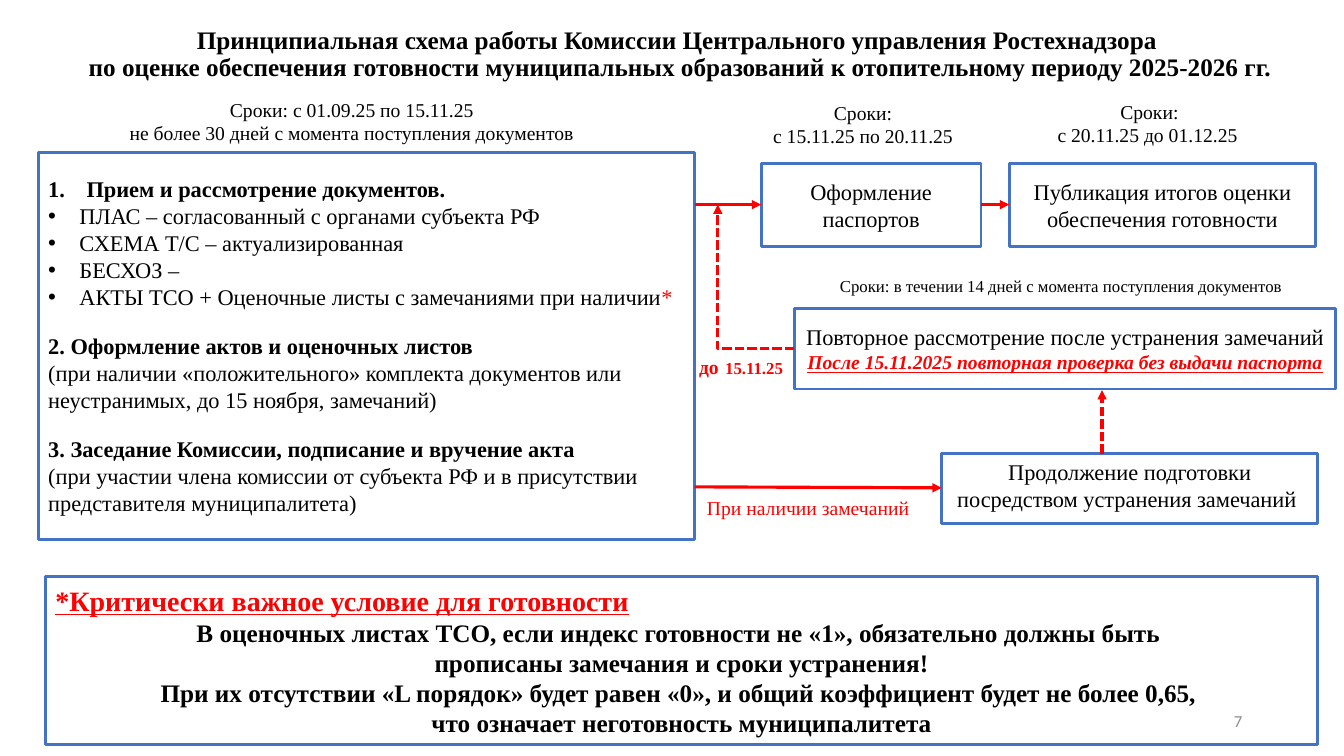
from dataclasses import dataclass

from lxml.etree import SubElement
from pptx import Presentation
from pptx.dml.color import RGBColor
from pptx.enum.dml import MSO_LINE
from pptx.enum.shapes import MSO_CONNECTOR, MSO_SHAPE
from pptx.enum.text import MSO_ANCHOR as Anchor, PP_ALIGN as Align
from pptx.oxml.ns import qn
from pptx.slide import Slide
from pptx.text.text import TextFrame
from pptx.util import Inches, Pt

BLACK = RGBColor(0x00, 0x00, 0x00)
RED = RGBColor(0xFF, 0x00, 0x00)
BLUE = RGBColor(0x44, 0x72, 0xC4)
GRAY = RGBColor(0x8C, 0x8C, 0x8C)
SERIF = "Times New Roman"
SECTION_GAP = 16
STEP_ROW = 2.03
BULLET = "•"
NUMBER = "1."


@dataclass(frozen=True)
class Span:
    text: str
    size: float = 16
    color: RGBColor = BLACK
    bold: bool = False
    italic: bool = False
    underline: bool = False
    font: str = SERIF


@dataclass(frozen=True)
class Line:
    spans: tuple[Span, ...]
    align: Align = Align.CENTER
    marker: str = ""
    before: float = 0
    spacing: float = 1.0


@dataclass(frozen=True)
class Block:
    left: float
    top: float
    width: float
    height: float
    lines: tuple[Line, ...]
    framed: bool = False
    anchor: Anchor = Anchor.TOP


@dataclass(frozen=True)
class Arrow:
    start: tuple[float, float]
    end: tuple[float, float]
    dashed: bool = False
    bent: bool = False


def centered(text: str, size: float = 16, color: RGBColor = BLACK, bold: bool = False) -> Line:
    return Line((Span(text, size, color, bold),))


def item(text: str, *more: Span) -> Line:
    return Line((Span(text), *more), Align.LEFT, BULLET)


def heading(text: str) -> Line:
    return Line((Span(text, bold=True),), Align.LEFT, before=SECTION_GAP)


def detail(text: str) -> Line:
    return Line((Span(text),), Align.LEFT)


def framed(left: float, top: float, width: float, height: float, *lines: Line,
           anchor: Anchor = Anchor.MIDDLE) -> Block:
    return Block(left, top, width, height, lines, True, anchor)


def label(left: float, top: float, width: float, height: float, *lines: Line) -> Block:
    return Block(left, top, width, height, lines)


BLOCKS = (
    Block(0.52, 0.12, 12.45, 0.74, (
        Line((Span("Принципиальная схема работы Комиссии Центрального управления Ростехнадзора \v"
                   "по оценке обеспечения готовности муниципальных образований "
                   "к отопительному периоду 2025-2026 гг.", 18, bold=True),), spacing=0.9),
    ), anchor=Anchor.BOTTOM),
    framed(
        0.38, 1.51, 6.51, 3.84,
        Line((Span("Прием и рассмотрение документов.", bold=True),), Align.LEFT, NUMBER),
        item("ПЛАС – согласованный с органами субъекта РФ"),
        item("СХЕМА Т/С – актуализированная"),
        item("БЕСХОЗ –"),
        item("АКТЫ ТСО + Оценочные листы с замечаниями при наличии", Span("*", color=RED)),
        heading("2. Оформление актов и оценочных листов"),
        detail("(при наличии «положительного» комплекта документов или "
               "неустранимых, до 15 ноября, замечаний)"),
        heading("3. Заседание Комиссии, подписание и вручение акта"),
        detail("(при участии члена комиссии от субъекта РФ и в присутствии "
               "представителя муниципалитета)"),
    ),
    framed(
        7.88, 3.06, 5.37, 0.8,
        centered("Повторное рассмотрение после устранения замечаний"),
        Line((Span("После 15.11.2025 повторная проверка без выдачи паспорта",
                   14, RED, True, True, True),)),
    ),
    framed(7.55, 1.62, 2.18, 0.83, centered("Оформление паспортов")),
    framed(10.01, 1.62, 3.04, 0.83, centered("Публикация итогов оценки обеспечения готовности")),
    framed(9.34, 4.5, 3.73, 0.69,
           centered("Продолжение подготовки посредством устранения замечаний "),
           anchor=Anchor.TOP),
    framed(
        0.45, 5.72, 12.62, 1.67,
        Line((Span("*Критически важное условие для готовности", 20, RED, True, underline=True),),
             Align.LEFT),
        centered("В оценочных листах ТСО, если индекс готовности не «1», обязательно должны быть \v"
                 "прописаны замечания и сроки устранения!", 18, bold=True),
        centered("При их отсутствии «L порядок» будет равен «0», и общий коэффициент "
                 "будет не более 0,65, \vчто означает неготовность муниципалитета", 18, bold=True),
    ),
    label(0.38, 0.92, 6.22, 0.57,
          centered("Сроки: с 01.09.25 по 15.11.25", 14),
          centered("не более 30 дней с момента поступления документов", 14)),
    label(7.55, 0.95, 2.02, 0.57,
          centered("Сроки:", 14), centered("с 15.11.25 по 20.11.25", 14)),
    label(10.39, 0.94, 2.02, 0.57,
          centered("Сроки:", 14), Line((Span("с 20.11.25 до 01.12.25", 14),), Align.LEFT)),
    label(7.84, 2.69, 5.37, 0.3,
          centered("Сроки: в течении 14 дней с момента поступления документов", 12)),
    label(6.82, 3.42, 1.06, 0.4,
          Line((Span("до", 14, RED, True), Span(" ", 18, RED, True),
                Span("15.11.25", 12, RED, True)))),
    label(6.89, 4.87, 2.25, 0.34, centered("При наличии замечаний", 14, RED)),
    Block(9.42, 6.95, 3, 0.4, (Line((Span("7", 12, GRAY, font="Calibri"),), Align.RIGHT),),
          anchor=Anchor.MIDDLE),
)

ARROWS = (
    Arrow((6.89, STEP_ROW), (7.55, STEP_ROW)),
    Arrow((9.73, STEP_ROW), (10.01, STEP_ROW)),
    Arrow((6.89, 4.83), (9.34, 4.84)),
    Arrow((10.93, 4.5), (10.93, 3.87), dashed=True),
    Arrow((7.88, 3.46), (7.12, STEP_ROW), dashed=True, bent=True),
)


def write_lines(text_frame: TextFrame, lines: tuple[Line, ...]) -> None:
    for index, line in enumerate(lines):
        paragraph = text_frame.add_paragraph() if index else text_frame.paragraphs[0]
        paragraph.alignment = line.align
        paragraph.line_spacing = line.spacing
        paragraph.space_before = Pt(line.before)
        if line.marker:
            properties = paragraph._p.get_or_add_pPr()
            indent = Inches(0.38 if line.marker == NUMBER else 0.31)
            properties.set("marL", str(indent))
            properties.set("indent", str(-indent))
            if line.marker == NUMBER:
                SubElement(properties, qn("a:buAutoNum"), type="arabicPeriod")
            else:
                SubElement(properties, qn("a:buFont"), typeface="Arial")
                SubElement(properties, qn("a:buChar"), char=line.marker)
        for position, span in enumerate(line.spans):
            if position:
                paragraph.add_run().text = span.text
            else:
                paragraph.text = span.text
            for run in paragraph.runs[position:]:
                font = run.font
                font.name, font.size = span.font, Pt(span.size)
                font.bold, font.italic, font.underline = span.bold, span.italic, span.underline
                font.color.rgb = span.color


def draw_block(slide: Slide, block: Block) -> None:
    bounds = [Inches(value) for value in (block.left, block.top, block.width, block.height)]
    if block.framed:
        shape = slide.shapes.add_shape(MSO_SHAPE.RECTANGLE, *bounds)
        shape.shadow.inherit = False
        shape.fill.background()
        shape.line.color.rgb = BLUE
        shape.line.width = Pt(2)
    else:
        shape = slide.shapes.add_textbox(*bounds)
    shape.text_frame.word_wrap = True
    shape.text_frame.vertical_anchor = block.anchor
    write_lines(shape.text_frame, block.lines)


def draw_arrow(slide: Slide, arrow: Arrow) -> None:
    kind = MSO_CONNECTOR.ELBOW if arrow.bent else MSO_CONNECTOR.STRAIGHT
    ends = [Inches(value) for value in (*arrow.start, *arrow.end)]
    connector = slide.shapes.add_connector(kind, *ends)
    properties = connector._element.spPr
    if arrow.bent:
        properties.find(qn("a:prstGeom")).set("prst", "bentConnector2")
    connector.line.color.rgb = RED
    connector.line.width = Pt(2.25)
    if arrow.dashed:
        connector.line.dash_style = MSO_LINE.SQUARE_DOT
    SubElement(properties.find(qn("a:ln")), qn("a:tailEnd"), type="triangle")
    SubElement(properties, qn("a:effectLst"))


def main() -> None:
    presentation = Presentation()
    presentation.slide_width, presentation.slide_height = Inches(13.33), Inches(7.5)
    slide = presentation.slides.add_slide(presentation.slide_layouts[6])
    for block in BLOCKS:
        draw_block(slide, block)
    for arrow in ARROWS:
        draw_arrow(slide, arrow)
    presentation.save("out.pptx")


if __name__ == "__main__":
    main()
